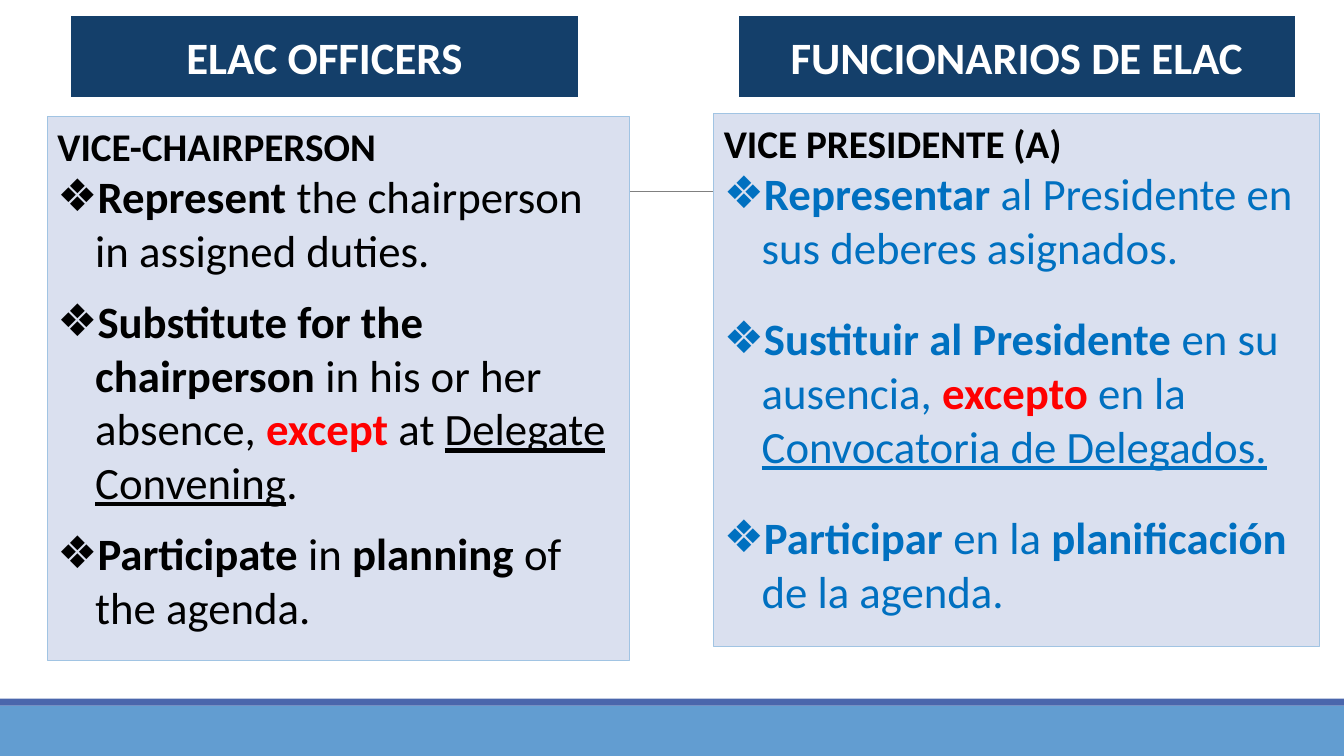
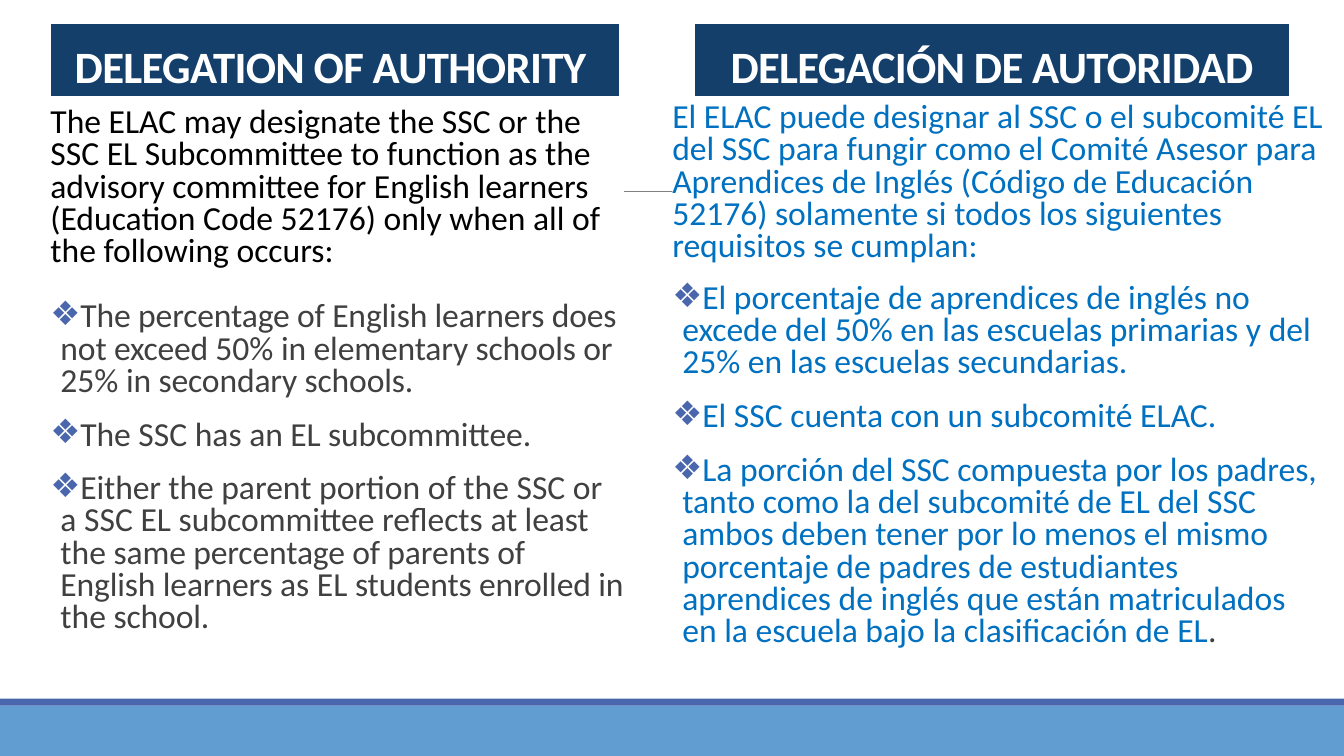
from lxml.etree import SubElement
from pptx import Presentation
from pptx.dml.color import RGBColor
from pptx.enum.shapes import MSO_CONNECTOR, MSO_SHAPE
from pptx.enum.text import MSO_ANCHOR, MSO_AUTO_SIZE, PP_ALIGN
from pptx.oxml.ns import qn
from pptx.util import Pt

HUES = {
    "navy": "143F6A", "band": "629DD1", "strip": "4A66AC", "rule": "808080",
    "panel": "DAE0EF", "edge": "A1C4E3", "white": "FFFFFF", "black": "000000",
    "gray": "404040", "blue": "0070C0", "red": "FF0000",
}
WIDE, HIGH = 960, 540
BOLD = {"bold": True}
LINED = {"under": True}
ALERT = {"bold": True, "hue": "red"}
TIGHT = {"track": -0.1}


def hue(name):
    return RGBColor.from_string(HUES[name])


class Deck:
    font = "Calibri"

    def __init__(self):
        self.prs = Presentation()
        self.prs.slide_width, self.prs.slide_height = Pt(WIDE), Pt(HIGH)
        self.slide = None

    def start(self):
        self.slide = self.prs.slides.add_slide(self.prs.slide_layouts[3])

    def share(self, shapes):
        """Move shapes from the current slide to the slide master."""
        tree = self.prs.slide_master.shapes.element
        for num, shape in enumerate(shapes, 101):
            shape.element.xpath(".//p:cNvPr")[0].set("id", str(num))
            tree.append(shape.element)

    def paint(self, shape, fill, line=None, width=0):
        shape.shadow.inherit = False
        shape.fill.solid()
        shape.fill.fore_color.rgb = hue(fill)
        if line:
            shape.line.color.rgb = hue(line)
            shape.line.width = Pt(width)
        else:
            shape.line.fill.background()

    def rect(self, box, fill):
        shape = self.slide.shapes.add_shape(MSO_SHAPE.RECTANGLE, *map(Pt, box))
        self.paint(shape, fill)
        return shape

    def rule(self, left, right, top):
        ends = map(Pt, (left, top, right, top))
        line = self.slide.shapes.add_connector(MSO_CONNECTOR.STRAIGHT, *ends)
        line.line.color.rgb = hue("rule")
        line.line.width = Pt(0.5)
        SubElement(line.element.spPr, qn("a:effectLst"))
        return line

    def place(self, shape, box):
        shape.left, shape.top, shape.width, shape.height = map(Pt, box)

    def setup(self, shape, anchor, side=7.2):
        frame = shape.text_frame
        frame.word_wrap = True
        frame.auto_size = MSO_AUTO_SIZE.NONE
        frame.vertical_anchor = anchor
        frame.margin_left = frame.margin_right = Pt(side)
        frame.margin_top = frame.margin_bottom = Pt(3.6)
        return frame

    def run(self, para, text, size, tint, bold=False, under=False, hue_=None, track=0):
        run = para.add_run()
        run.text = text
        font = run.font
        font.name, font.size, font.bold = self.font, Pt(size), bold
        if under:
            font.underline = True
        font.color.rgb = hue(hue_ or tint)
        if track:
            run._r.get_or_add_rPr().set("spc", str(round(track * 100)))

    def fill(self, para, runs, size, tint):
        """Add runs, each a plain string or a (text, style) pair."""
        for item in runs:
            text, style = (item, {}) if isinstance(item, str) else item
            style = {"hue_" if key == "hue" else key: val for key, val in style.items()}
            self.run(para, text, size, tint, **style)

    def head(self, text, box, anchor, space=1.0, track=0, title=False):
        if title:
            shape = self.slide.shapes.title
            self.place(shape, box)
        else:
            shape = self.rect(box, "navy")
        self.paint(shape, "navy", "white", 2.25)
        para = self.setup(shape, anchor).paragraphs[0]
        para.alignment = PP_ALIGN.CENTER
        para.line_spacing = space
        self.run(para, text, 32, "white", bold=True, track=track)

    def body(self, spot, box, panel=False):
        shape = self.slide.placeholders[spot]
        self.place(shape, box)
        if panel:
            self.paint(shape, "panel", "edge", 0.75)
        else:
            self.paint(shape, "white")
        return self.setup(shape, MSO_ANCHOR.TOP, 7.2 if panel else 0)

    def para(self, para, space, before=0, after=0):
        para.line_spacing = space
        para.space_before, para.space_after = Pt(before), Pt(after)
        return para._p.get_or_add_pPr()

    def lead(self, frame, text, size, tint, space=1.0, bold=False):
        para = frame.paragraphs[0]
        props = self.para(para, space)
        props.set("marL", "0")
        props.set("indent", "0")
        SubElement(props, qn("a:buNone"))
        self.run(para, text, size, tint, bold=bold)

    def bullets(self, frame, items, size, tint, indent, first=0, gap=0,
                after=0, space=1.0, mark=None):
        for num, runs in enumerate(items):
            para = frame.add_paragraph()
            props = self.para(para, space, gap if num else first, after)
            props.set("marL", str(Pt(indent)))
            props.set("indent", str(-Pt(indent)))
            if mark:
                color = SubElement(props, qn("a:buClr"))
                SubElement(color, qn("a:srgbClr")).set("val", HUES[mark])
            SubElement(props, qn("a:buChar")).set("char", "❖")
            self.fill(para, runs, size, tint)


def officers(deck):
    mid = MSO_ANCHOR.MIDDLE
    deck.head("ELAC OFFICERS", (49.7, 10.1, 364.3, 60.5), mid, title=True)
    deck.head("FUNCIONARIOS DE ELAC", (527, 10.1, 398.9, 60.5), mid)
    english = [
        [("Represent", BOLD), " the chairperson in assigned duties."],
        [("Substitute for the chairperson ", BOLD), "in his or her absence, ",
         ("except", ALERT), " at ", ("Delegate Convening", LINED), "."],
        [("Participate", BOLD), " in ", ("planning", BOLD), " of the agenda."],
    ]
    spanish = [
        [("Representar ", BOLD), "al Presidente en sus deberes asignados."],
        [("Sustituir al Presidente ", BOLD), "en su ausencia, ",
         ("excepto", ALERT), " en la ", ("Convocatoria de Delegados.", LINED)],
        [("Participar ", BOLD), "en la ", ("planificación", BOLD), " de la agenda."],
    ]
    for spot, box, name, items, tint, gap in (
        (1, (33.8, 83.5, 416.2, 388.1), "VICE-CHAIRPERSON", english, "black", 12.2),
        (2, (509.8, 81.4, 432.7, 380.2), "VICE PRESIDENTE (A)", spanish, "blue", 26.8),
    ):
        frame = deck.body(spot, box, panel=True)
        deck.lead(frame, name, 28, "black", bold=True)
        deck.bullets(frame, items, 32, tint, 27, gap=gap)


def powers(deck):
    look = {"anchor": MSO_ANCHOR.BOTTOM, "space": 0.85, "track": -0.5}
    deck.head("DELEGATION OF AUTHORITY ", (35.3, 15.8, 408.2, 54), title=True, **look)
    deck.head("DELEGACIÓN DE AUTORIDAD", (495.4, 15.8, 426.2, 54), **look)
    english = [
        [("The percentage of English learners does not ", TIGHT),
         ("exceed ", {"track": -0.2}), "50% ",
         ("in elementary schools or ", TIGHT), "25% ",
         ("in secondary schools.", TIGHT)],
        [("The", TIGHT), " SSC has a", ("n EL subcommittee.", TIGHT)],
        [("Either the", TIGHT),
         " parent portion of the SSC or a SSC EL subcommittee reflects ",
         ("at least ", TIGHT), "the ",
         ("same percentage of parents of English learners ", TIGHT), "as EL ",
         ("students enrolled in ", TIGHT), "the ", ("school.", TIGHT)],
    ]
    spanish = [
        ["El porcentaje de aprendices de inglés no excede del 50% en las "
         "escuelas primarias y del 25% en las escuelas secundarias."],
        ["El SSC cuenta con un subcomité ELAC."],
        ["La porción del SSC compuesta por los padres, tanto como la del "
         "subcomité de EL del SSC ambos deben tener por lo menos el mismo "
         "porcentaje de padres de estudiantes aprendices de inglés que están "
         "matriculados en la escuela bajo la clasificación de EL",
         (".", {"hue": "gray"})],
    ]
    intro = ("The ELAC may designate the SSC or the SSC EL Subcommittee to function "
             "as the advisory committee for English learners (Education Code 52176) "
             "only when all of the following occurs:")
    entrada = ("El ELAC puede designar al SSC o el subcomité EL del SSC para fungir "
               "como el Comité Asesor para Aprendices de Inglés (Código de Educación "
               "52176) solamente si todos los siguientes requisitos se cumplan:")
    for spot, box, text, items, tints, first in (
        (1, (36, 73.4, 409.7, 407.5), intro, english, ("black", "gray"), 23.5),
        (2, (480.2, 69.8, 466.6, 419.8), entrada, spanish, ("blue", "blue"), 14),
    ):
        frame = deck.body(spot, box)
        deck.lead(frame, text, 24, tints[0], space=0.8)
        deck.bullets(frame, items, 24, tints[1], 7.2, first=first, gap=0.3,
                     after=15, space=0.8, mark="strip")


def main():
    deck = Deck()
    deck.start()
    deck.share([
        deck.rect((0, 504, WIDE, 36), "band"),
        deck.rect((0, 499, WIDE, 5), "strip"),
        deck.rule(94.3, 879.1, 136.8),
    ])
    officers(deck)
    deck.start()
    powers(deck)
    deck.prs.save("out.pptx")


if __name__ == "__main__":
    main()
